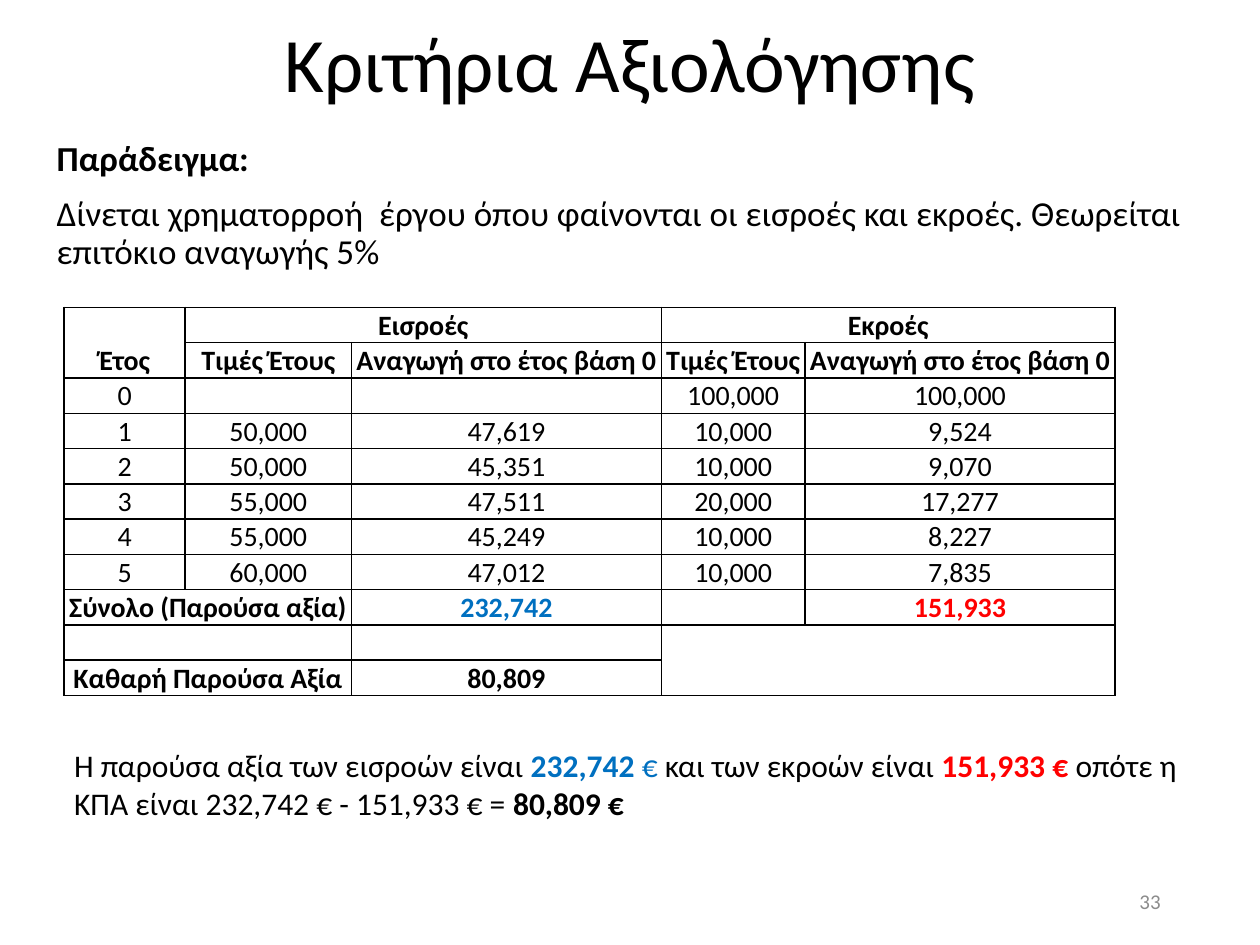
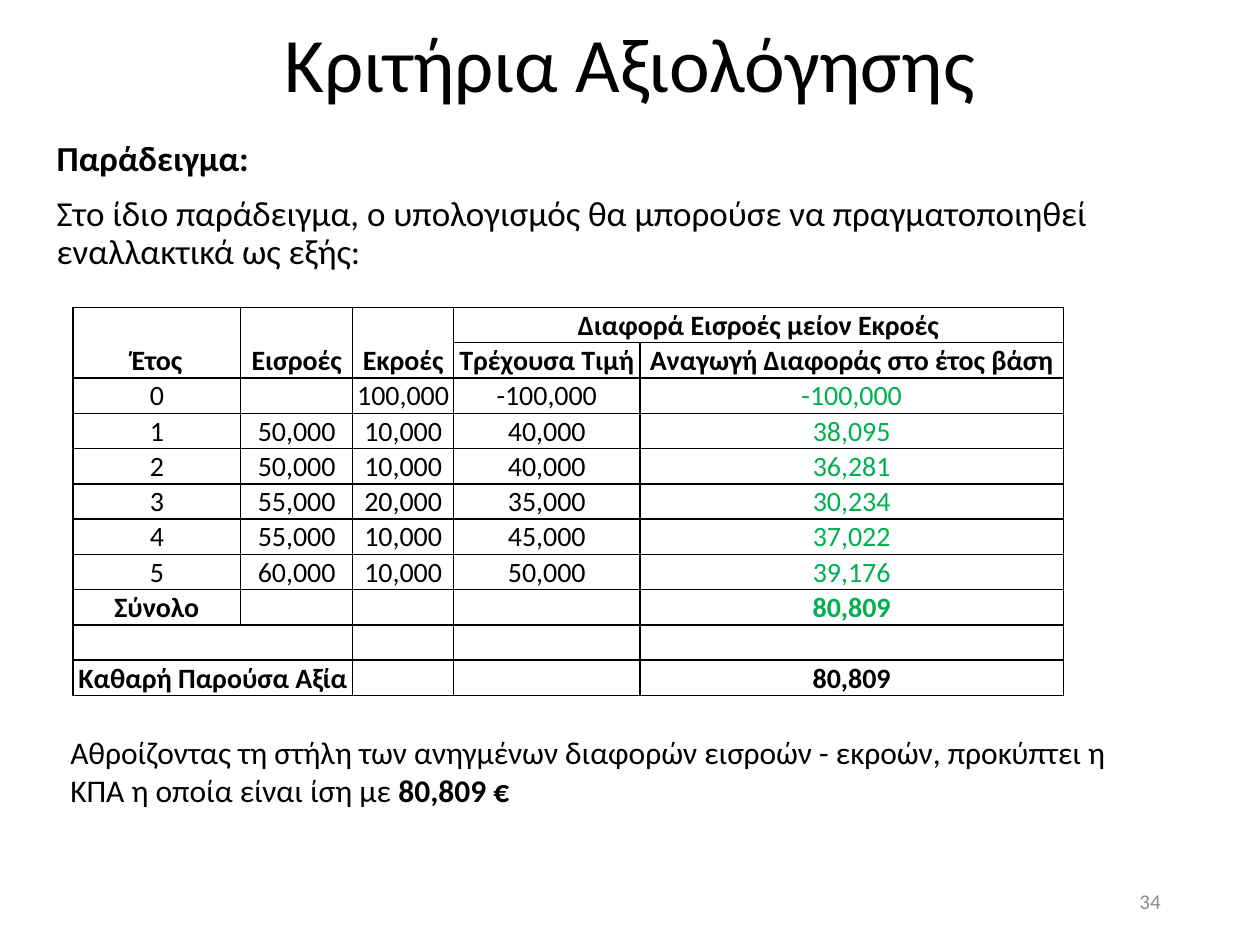
from lxml.etree import SubElement
from pptx import Presentation
from pptx.dml.color import RGBColor
from pptx.enum.text import MSO_ANCHOR, MSO_AUTO_SIZE, PP_ALIGN
from pptx.oxml.ns import qn
from pptx.util import Inches, Pt

# Shared style
FONT = "Calibri"
BLACK = RGBColor(0x00, 0x00, 0x00)
GRAY = RGBColor(0x8C, 0x8C, 0x8C)
BLUE = RGBColor(0x00, 0x70, 0xC0)
RED = RGBColor(0xFF, 0x00, 0x00)
GREEN = RGBColor(0x00, 0xB0, 0x50)
TITLE = "Κριτήρια Αξιολόγησης"
ROW_HEIGHT = 0.28
TABLE_TOP = 2.44

# Cash flow with separate inflows and outflows
FLOW_WIDTHS = [0.96, 1.32, 2.46, 1.14, 2.46]
FLOW_ROWS = [
    ["Έτος", "Εισροές", "", "Εκροές", ""],
    ["", "Τιμές Έτους", "Αναγωγή στο έτος βάση 0", "Τιμές Έτους", "Αναγωγή στο έτος βάση 0"],
    ["0", "", "", "100,000", "100,000"],
    ["1", "50,000", "47,619", "10,000", "9,524"],
    ["2", "50,000", "45,351", "10,000", "9,070"],
    ["3", "55,000", "47,511", "20,000", "17,277"],
    ["4", "55,000", "45,249", "10,000", "8,227"],
    ["5", "60,000", "47,012", "10,000", "7,835"],
    ["Σύνολο (Παρούσα αξία)", "", "232,742", "", "151,933"],
    ["", "", "", "", ""],
    ["Καθαρή Παρούσα Αξία", "", "80,809", "", ""],
]
FLOW_MERGES = [
    ((0, 0), (1, 0)), ((0, 1), (0, 2)), ((0, 3), (0, 4)), ((8, 0), (8, 1)),
    ((9, 0), (9, 1)), ((9, 3), (10, 4)), ((10, 0), (10, 1)),
]
FLOW_COLORS = {(8, 2): BLUE, (8, 4): RED}

# Cash flow by yearly difference
DIFFERENCE_WIDTHS = [1.33, 0.89, 0.8, 1.48, 3.36]
DIFFERENCE_ROWS = [
    ["Έτος", "Εισροές", "Εκροές", "Διαφορά Εισροές μείον Εκροές", ""],
    ["", "", "", "Τρέχουσα Τιμή", "Αναγωγή Διαφοράς στο έτος βάση"],
    ["0", "", "100,000", "-100,000", "-100,000"],
    ["1", "50,000", "10,000", "40,000", "38,095"],
    ["2", "50,000", "10,000", "40,000", "36,281"],
    ["3", "55,000", "20,000", "35,000", "30,234"],
    ["4", "55,000", "10,000", "45,000", "37,022"],
    ["5", "60,000", "10,000", "50,000", "39,176"],
    ["Σύνολο", "", "", "", "80,809"],
    ["", "", "", "", ""],
    ["Καθαρή Παρούσα Αξία", "", "", "", "80,809"],
]
DIFFERENCE_MERGES = [
    ((0, 0), (1, 0)), ((0, 1), (1, 1)), ((0, 2), (1, 2)), ((0, 3), (0, 4)),
    ((9, 0), (9, 1)), ((10, 0), (10, 1)),
]
DIFFERENCE_COLORS = {(row, 4): GREEN for row in range(2, 9)}
BOLD_ROWS = {0, 1, 8, 9, 10}


def style_font(font, size, color=BLACK, bold=False):
    font.name = FONT
    font.size = Pt(size)
    font.bold = bold
    font.color.rgb = color


def place(shape, left, top, width, height):
    shape.left, shape.top = Inches(left), Inches(top)
    shape.width, shape.height = Inches(width), Inches(height)


def add_page(deck, introduction, number):
    """Add a page with its title, introduction and page number."""
    page = deck.slides.add_slide(deck.slide_layouts[1])
    title, body = page.placeholders

    # Title
    place(title, 0, 0, 10, 1.07)
    title.text_frame.auto_size = MSO_AUTO_SIZE.NONE
    title.text_frame.vertical_anchor = MSO_ANCHOR.MIDDLE
    para = title.text_frame.paragraphs[0]
    para.text = TITLE
    para.alignment = PP_ALIGN.CENTER
    para.line_spacing = 0.9
    style_font(para.font, 44)

    # Introduction without bullets
    place(body, 0.35, 1.07, 9.49, 1.37)
    body.text_frame.text = f"Παράδειγμα:\n{introduction}"
    body.text_frame.auto_size = MSO_AUTO_SIZE.NONE
    for index, para in enumerate(body.text_frame.paragraphs):
        para.line_spacing = 0.9
        para.space_before = Pt(10)
        style_font(para.font, 20, bold=index == 0)
        properties = para._p.get_or_add_pPr()
        properties.set("marL", "0")
        properties.set("indent", "0")
        properties.insert_element_before(
            properties.makeelement(qn("a:buNone"), {}), "a:tabLst", "a:defRPr")

    # Page number
    box = page.shapes.add_textbox(Inches(7.06), Inches(6.95), Inches(2.25), Inches(0.4))
    box.text_frame.vertical_anchor = MSO_ANCHOR.MIDDLE
    box.text_frame.word_wrap = True
    para = box.text_frame.paragraphs[0]
    para.text = str(number)
    para.alignment = PP_ALIGN.RIGHT
    style_font(para.font, 12, GRAY)
    return page


def add_borders(cell):
    properties = cell._tc.get_or_add_tcPr()
    for side in ("a:lnL", "a:lnR", "a:lnT", "a:lnB"):
        line = SubElement(properties, qn(side), w=str(Pt(1)))
        fill = SubElement(line, qn("a:solidFill"))
        SubElement(fill, qn("a:srgbClr"), val=str(BLACK))


def add_cash_table(page, left, widths, rows, merges, colors):
    frame = page.shapes.add_table(
        len(rows), len(widths), Inches(left), Inches(TABLE_TOP),
        Inches(sum(widths)), Inches(ROW_HEIGHT * len(rows)))
    table = frame.table
    table.first_row = table.horz_banding = False
    for column, width in zip(table.columns, widths):
        column.width = Inches(width)
    for row_index, texts in enumerate(rows):
        table.rows[row_index].height = Inches(ROW_HEIGHT)
        for column_index, text in enumerate(texts):
            cell = table.cell(row_index, column_index)
            cell.margin_left = cell.margin_right = cell.margin_top = Inches(0.01)
            cell.margin_bottom = 0
            cell.vertical_anchor = MSO_ANCHOR.BOTTOM
            add_borders(cell)
            cell.fill.background()
            para = cell.text_frame.paragraphs[0]
            para.text = text
            para.alignment = PP_ALIGN.CENTER
            color = colors.get((row_index, column_index), BLACK)
            style_font(para.font, 16, color, row_index in BOLD_ROWS)
    for first, last in merges:
        table.cell(*first).merge(table.cell(*last))


def add_conclusion(page, left, top, width, spans):
    """Add a text box from (text, colour, bold) spans."""
    box = page.shapes.add_textbox(Inches(left), Inches(top), Inches(width), Inches(0.71))
    box.text_frame.word_wrap = True
    box.text_frame.auto_size = MSO_AUTO_SIZE.SHAPE_TO_FIT_TEXT
    para = box.text_frame.paragraphs[0]
    for text, color, bold in spans:
        span = para.add_run()
        span.text = text
        style_font(span.font, 18, color, bold)


def main():
    deck = Presentation()
    deck.slide_width, deck.slide_height = Inches(10), Inches(7.5)

    # Present values of inflows and outflows
    page = add_page(
        deck,
        "Δίνεται χρηματορροή  έργου όπου φαίνονται οι εισροές και εκροές. "
        "Θεωρείται επιτόκιο αναγωγής 5%", 33)
    add_cash_table(page, 0.51, FLOW_WIDTHS, FLOW_ROWS, FLOW_MERGES, FLOW_COLORS)
    add_conclusion(page, 0.49, 5.87, 9.03, [
        ("Η παρούσα αξία των εισροών είναι ", BLACK, False),
        ("232,742", BLUE, True),
        (" € ", BLUE, False),
        ("και των εκροών είναι ", BLACK, False),
        ("151,933 €", RED, True),
        (" οπότε η ΚΠΑ είναι 232,742 € - 151,933 € = ", BLACK, False),
        ("80,809 €", BLACK, True),
    ])

    # Present value of the differences
    page = add_page(
        deck,
        "Στο ίδιο παράδειγμα, ο υπολογισμός θα μπορούσε να πραγματοποιηθεί "
        "εναλλακτικά ως εξής:", 34)
    add_cash_table(page, 0.58, DIFFERENCE_WIDTHS, DIFFERENCE_ROWS,
                   DIFFERENCE_MERGES, DIFFERENCE_COLORS)
    add_conclusion(page, 0.46, 5.77, 8.5, [
        ("Αθροίζοντας τη στήλη των ανηγμένων διαφορών εισροών - εκροών, "
         "προκύπτει η ΚΠΑ η οποία είναι ίση με ", BLACK, False),
        ("80,809 €", BLACK, True),
    ])

    deck.save("out.pptx")


if __name__ == "__main__":
    main()
